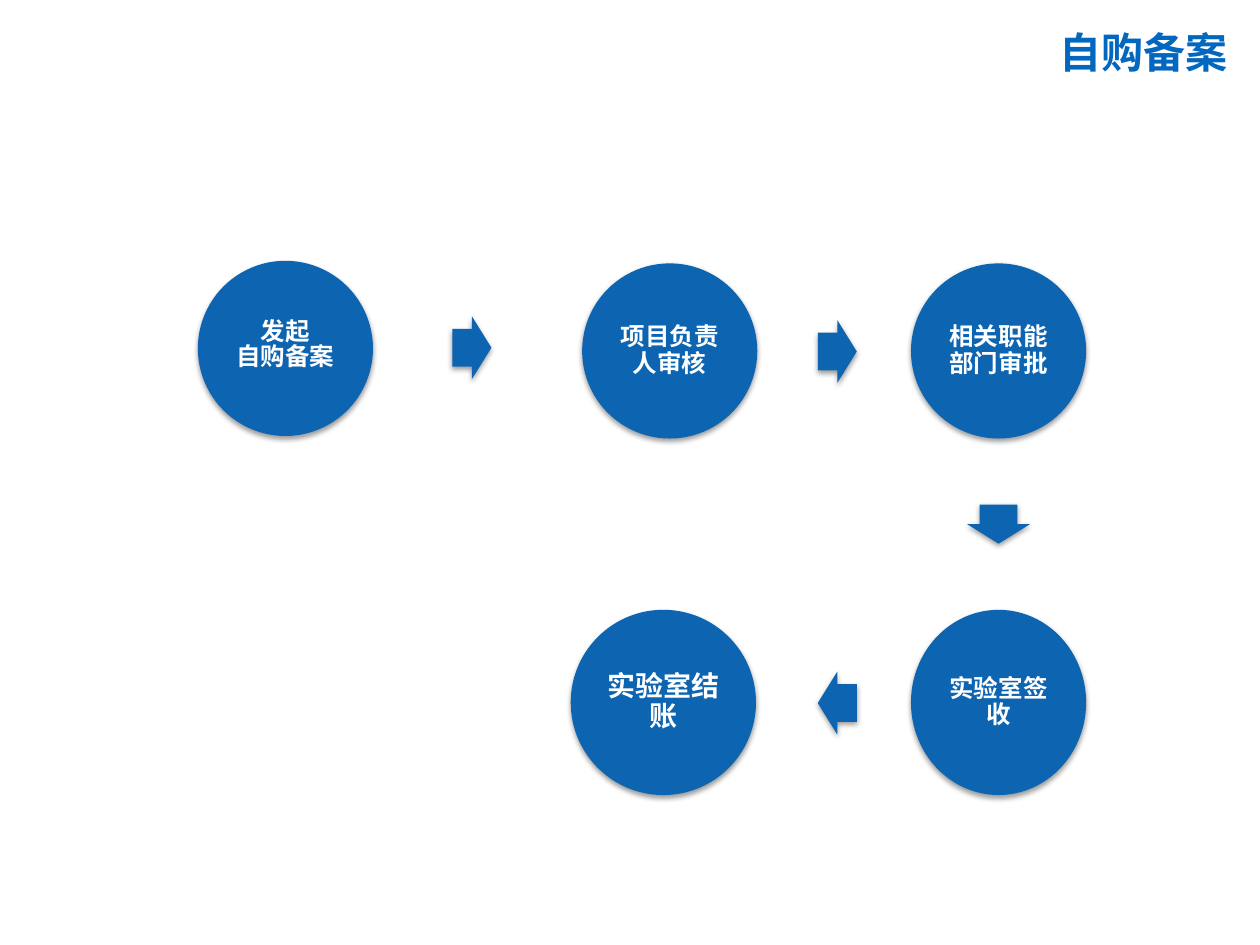
import pptx
import pptx.util
import pptx.dml.color
import pptx.enum.shapes
import pptx.enum.text
import pptx.oxml
import pptx.oxml.ns

Inches, Pt = pptx.util.Inches, pptx.util.Pt
SHAPE = pptx.enum.shapes.MSO_SHAPE
ALIGN = pptx.enum.text.PP_ALIGN
ANCHOR = pptx.enum.text.MSO_ANCHOR

BLUE = pptx.dml.color.RGBColor(0x0D, 0x64, 0xB1)
TITLE_BLUE = pptx.dml.color.RGBColor(0x02, 0x67, 0xBF)
WHITE = pptx.dml.color.RGBColor(0xFF, 0xFF, 0xFF)
FONT = "Noto Sans CJK SC"
SHADOW = (
    f'<a:effectLst {pptx.oxml.ns.nsdecls("a")}>'
    '<a:outerShdw blurRad="39370" dist="20320" dir="5400000" rotWithShape="0">'
    '<a:srgbClr val="000000"><a:alpha val="38000"/></a:srgbClr>'
    '</a:outerShdw></a:effectLst>'
)


def add_span(para, text, size, color):
    span = para.add_run()
    span.text = text
    span.font.size = Pt(size)
    span.font.bold = True
    span.font.color.rgb = color
    span.font.name = FONT
    east_asian = pptx.oxml.parse_xml(
        f'<a:ea {pptx.oxml.ns.nsdecls("a")} typeface="{FONT}"/>')
    span.font._element.append(east_asian)


def add_blue_shape(kind, left, top, width, height):
    shape = page.shapes.add_shape(
        kind, Inches(left), Inches(top), Inches(width), Inches(height))
    shape.fill.solid()
    shape.fill.fore_color.rgb = BLUE
    shape.line.fill.background()
    shape._element.spPr.append(pptx.oxml.parse_xml(SHADOW))
    return shape


deck = pptx.Presentation()
deck.slide_width, deck.slide_height = Inches(10), Inches(7.5)
page = deck.slides.add_slide(deck.slide_layouts[5])

# Title
title = page.shapes.title
title.left, title.top = Inches(6), Inches(0.16)
title.width, title.height = Inches(3.84), Inches(0.53)
title.text_frame.vertical_anchor = ANCHOR.TOP
para = title.text_frame.paragraphs[0]
para.alignment = ALIGN.RIGHT
add_span(para, "自购备案", 24, TITLE_BLUE)

# Steps: left, top, width, height, text size, line spacing, lines
steps = [
    (1.57, 2.07, 1.39, 1.39, 14, 0.5, ["发起", "自购备案"]),
    (4.62, 2.09, 1.39, 1.39, 14, 0.9, ["项目负责人审核"]),
    (7.23, 2.09, 1.39, 1.39, 14, 0.9, ["相关职能部门审批"]),
    (7.23, 4.84, 1.39, 1.47, 14, 0.9, ["实验室签收"]),
    (4.53, 4.84, 1.47, 1.47, 16, 0.9, ["实验室结账"]),
]
for left, top, width, height, size, spacing, lines in steps:
    circle = add_blue_shape(SHAPE.OVAL, left, top, width, height)
    frame = circle.text_frame
    frame.word_wrap = True
    frame.vertical_anchor = ANCHOR.MIDDLE
    frame.margin_left = frame.margin_right = Inches(0.03)
    frame.margin_top = frame.margin_bottom = Inches(0.03)
    for index, line in enumerate(lines):
        para = frame.add_paragraph() if index else frame.paragraphs[0]
        para.alignment = ALIGN.CENTER
        para.line_spacing = spacing
        para.space_after = Pt(6)
        add_span(para, line, size, WHITE)

# Arrows between the steps: left, top, rotation
for left, top, rotation in [(3.59, 2.51, 0), (6.49, 2.54, 0),
                            (7.77, 3.91, 90), (6.49, 5.33, 180)]:
    arrow = add_blue_shape(SHAPE.RIGHT_ARROW, left, top, 0.31, 0.5)
    arrow.adjustments[0] = 0.6
    arrow.adjustments[1] = 0.5
    arrow.rotation = rotation

deck.save("out.pptx")
